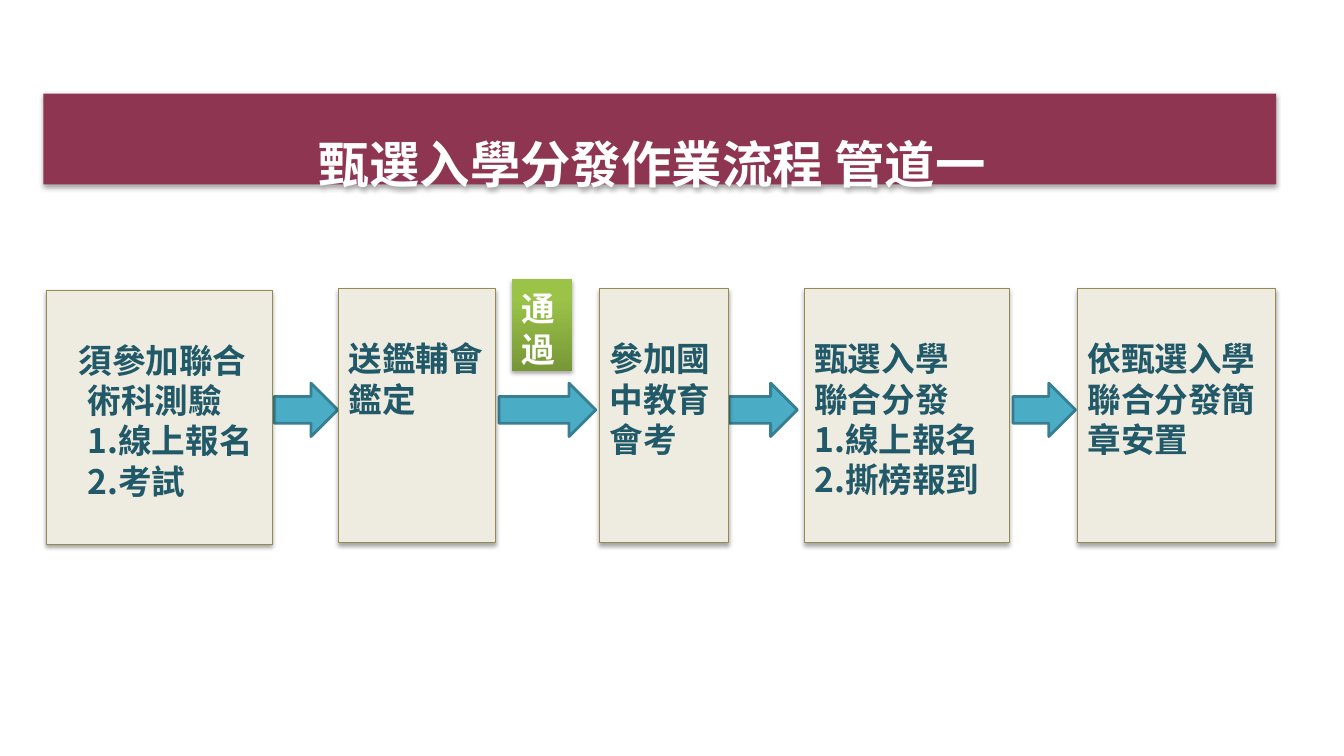
from lxml.etree import SubElement
from pptx import Presentation
from pptx.dml.color import RGBColor
from pptx.enum.shapes import MSO_SHAPE as Preset
from pptx.enum.text import MSO_ANCHOR as Anchor, PP_ALIGN as Align
from pptx.oxml.ns import qn
from pptx.util import Inches, Pt

STEPS = [
    (3.45, 38.4, 16.8, ["須參加聯合", "術科測驗", "1.線上報名", "2.考試"], [0.22, 0.31, 0.31, 0.31]),
    (25.2, 38.2, 11.7, ["送鑑輔會", "鑑定"], [0, 0]),
    (44.63, 38.2, 9.6, ["參加國中教育會考"], [0]),
    (59.85, 38.2, 15.23, ["甄選入學", "聯合分發", "1.線上報名", "2.撕榜報到"], [0] * 4),
    (80.18, 38.2, 14.7, ["依甄選入學", "聯合分發簡章安置"], [0, 0]),
]
ARROWS = [(20.4, 4.73), (37.13, 7.2), (54.23, 5.1), (75.38, 4.65)]


def color(value):
    return RGBColor.from_string(value)


class FlowSlide:
    font = "Noto Sans CJK SC"
    columns = rows = 100

    def __init__(self, presentation):
        self.column = presentation.slide_width / self.columns
        self.row = presentation.slide_height / self.rows
        self.slide = presentation.slides.add_slide(presentation.slide_layouts[5])

    def place(self, left, top, width, height):
        return (round(left * self.column), round(top * self.row),
                round(width * self.column), round(height * self.row))

    def add_shape(self, preset, area):
        shape = self.slide.shapes.add_shape(preset, *self.place(*area))
        shape.shadow.inherit = False
        return shape

    def paint(self, shape, fill, line=None, weight=0.75):
        shape.fill.solid()
        shape.fill.fore_color.rgb = color(fill)
        if line:
            shape.line.color.rgb = color(line)
            shape.line.width = Pt(weight)
        else:
            shape.line.fill.background()

    def cast_shadow(self, shape):
        shape.shadow.inherit = False
        effects = shape._element.spPr.find(qn("a:effectLst"))
        shadow = SubElement(effects, qn("a:outerShdw"), blurRad=str(Pt(3.1)),
                            dist=str(Pt(1.8)), dir="5400000", rotWithShape="0")
        black = SubElement(shadow, qn("a:srgbClr"), val="000000")
        SubElement(black, qn("a:alpha"), val="35000")

    def set_text(self, shape, lines, size, ink, insets, align=Align.LEFT, indents=None):
        frame = shape.text_frame
        frame.word_wrap = True
        frame.vertical_anchor = Anchor.TOP
        frame.margin_left, frame.margin_top, frame.margin_right, frame.margin_bottom = map(Inches, insets)
        frame.text = "\n".join(lines)
        for paragraph, indent in zip(frame.paragraphs, indents or [0] * len(lines)):
            paragraph.alignment = align
            paragraph.line_spacing = Pt(size * 1.2)
            paragraph.space_before = Pt(0)
            properties = paragraph._p.get_or_add_pPr()
            properties.set("marL", str(Inches(indent)))
            properties.set("indent", "0")
            for run in paragraph.runs:
                run.font.size = Pt(size)
                run.font.bold = True
                run.font.color.rgb = color(ink)
                run.font.name = self.font
                SubElement(run._r.get_or_add_rPr(), qn("a:ea"), typeface=self.font)

    def title(self, text, area):
        shape = self.slide.shapes.title
        shape.left, shape.top, shape.width, shape.height = self.place(*area)
        self.paint(shape, "8E3651")
        self.cast_shadow(shape)
        self.set_text(shape, [text], 36, "FFFFFF", (0, 0.39, 0.15, 0), Align.CENTER)

    def step(self, left, top, width, lines, indents):
        shape = self.add_shape(Preset.RECTANGLE, (left, top, width, 33.6))
        self.paint(shape, "EEECE1", "948A54")
        self.cast_shadow(shape)
        self.set_text(shape, lines, 24, "215968", (0.1, 0.49, 0.1, 0.05), indents=indents)

    def arrow(self, left, width):
        shape = self.add_shape(Preset.RIGHT_ARROW, (left, 50.67, width, 7.07))
        self.paint(shape, "4BACC6", "377F92", 2)

    def badge(self, text, area):
        shape = self.add_shape(Preset.RECTANGLE, area)
        shape.line.fill.background()
        shape.fill.gradient()
        shape.fill.gradient_angle = 90
        stops = zip(shape.fill.gradient_stops, [(0, "779737"), (0.8, "9BC348")])
        for stop, (position, tint) in stops:
            stop.position = position
            stop.color.rgb = color(tint)
        self.cast_shadow(shape)
        self.set_text(shape, [text], 24, "FFFFFF", (0.1, 0.09, 0.1, 0))


def main():
    presentation = Presentation()
    presentation.slide_width = Inches(13.33)
    presentation.slide_height = Inches(7.5)
    flow = FlowSlide(presentation)
    flow.title("甄選入學分發作業流程 管道一", (3.23, 12.4, 91.73, 12))
    for arrow in ARROWS:
        flow.arrow(*arrow)
    for step in STEPS:
        flow.step(*step)
    flow.badge("通過", (38.1, 36.93, 4.5, 12.13))
    presentation.save("out.pptx")


if __name__ == "__main__":
    main()
